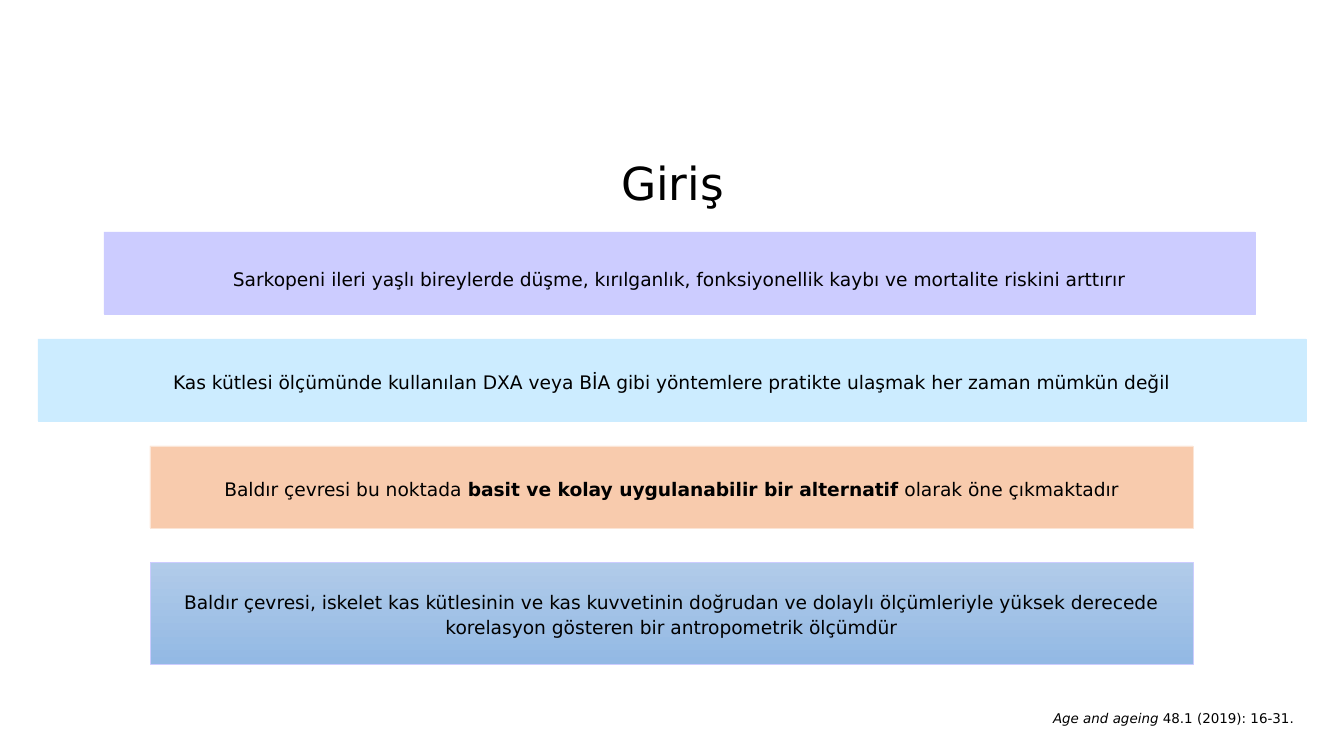
from pptx import Presentation
from pptx.dml.color import RGBColor
from pptx.enum.shapes import MSO_SHAPE
from pptx.enum.text import MSO_ANCHOR, PP_ALIGN
from pptx.util import Emu, Pt

BLACK = RGBColor(0x00, 0x00, 0x00)
LAVENDER = RGBColor(0xCC, 0xCC, 0xFF)
SKY = RGBColor(0xCC, 0xEC, 0xFF)
PEACH = RGBColor(0xF8, 0xCB, 0xAD)
PALE_PEACH = RGBColor(0xFB, 0xE5, 0xD6)
LIGHT_BLUE = RGBColor(0xB1, 0xCB, 0xE9)
MID_BLUE = RGBColor(0x93, 0xB9, 0xE4)

FONT = "DejaVu Sans"
SLIDE_WIDTH, SLIDE_HEIGHT = 1344, 756
PX = 914400 / 84

# Content: runs are (text, style)
TITLE = [("Giriş", "")]
CITATION = [("Age and ageing", "italic"), (" 48.1 (2019): 16-31.", "")]

# Bands: left, top, width, height, fill colours, line colour, line spacing, runs
BANDS = [
    (104, 232, 1151, 82, [LAVENDER], LAVENDER, 1.5, [
        ("Sarkopeni ileri yaşlı bireylerde düşme, kırılganlık, fonksiyonellik "
         "kaybı ve mortalite riskini arttırır", "")]),
    (38, 339, 1268, 82, [SKY], SKY, Pt(23.5), [
        ("Kas kütlesi ölçümünde kullanılan DXA veya BİA gibi yöntemlere "
         "pratikte ulaşmak her zaman mümkün değil", "")]),
    (150, 446, 1043, 82, [PEACH], PALE_PEACH, Pt(23.5), [
        ("Baldır çevresi bu noktada ", ""),
        ("basit ve kolay uygulanabilir bir alternatif", "bold"),
        (" olarak öne çıkmaktadır", "")]),
    (150, 562, 1043, 102, [LIGHT_BLUE, MID_BLUE], LAVENDER, Pt(22), [
        ("Baldır çevresi, iskelet kas kütlesinin ve kas kuvvetinin doğrudan ve "
         "dolaylı ölçümleriyle yüksek derecede korelasyon gösteren bir "
         "antropometrik ölçümdür", "")]),
]


def px(*lengths):
    return [Emu(round(length * PX)) for length in lengths]


def write(shape, runs, size, spacing, align, anchor=MSO_ANCHOR.TOP):
    frame = shape.text_frame
    frame.word_wrap = True
    frame.vertical_anchor = anchor
    frame.margin_left = frame.margin_right = 0
    frame.margin_top = frame.margin_bottom = 0
    paragraph = frame.paragraphs[0]
    paragraph.alignment = align
    paragraph.line_spacing = spacing
    for text, style in runs:
        run = paragraph.add_run()
        run.text = text
        run.font.name = FONT
        run.font.size = Pt(size)
        run.font.color.rgb = BLACK
        run.font.bold = style == "bold"
        run.font.italic = style == "italic"


def paint(fill, colors):
    if len(colors) == 1:
        fill.solid()
        fill.fore_color.rgb = colors[0]
        return
    fill.gradient()
    fill.gradient_angle = 270
    for stop, color in zip(fill.gradient_stops, colors):
        stop.color.rgb = color


presentation = Presentation()
presentation.slide_width, presentation.slide_height = px(SLIDE_WIDTH, SLIDE_HEIGHT)
slide = presentation.slides.add_slide(presentation.slide_layouts[6])

# Title
title = slide.shapes.add_textbox(*px(443, 152, 459, 57))
write(title, TITLE, 39, Pt(49), PP_ALIGN.CENTER)

# Statement bands
for left, top, width, height, colors, line_color, spacing, runs in BANDS:
    band = slide.shapes.add_shape(MSO_SHAPE.RECTANGLE, *px(left, top, width, height))
    band.shadow.inherit = False
    paint(band.fill, colors)
    band.line.color.rgb = line_color
    band.line.width = Pt(0.5)
    write(band, runs, 16, spacing, PP_ALIGN.CENTER, MSO_ANCHOR.MIDDLE)

# Citation
citation = slide.shapes.add_textbox(*px(1053, 704, 282, 45))
write(citation, CITATION, 11.5, Pt(19), PP_ALIGN.LEFT)

presentation.save("out.pptx")
